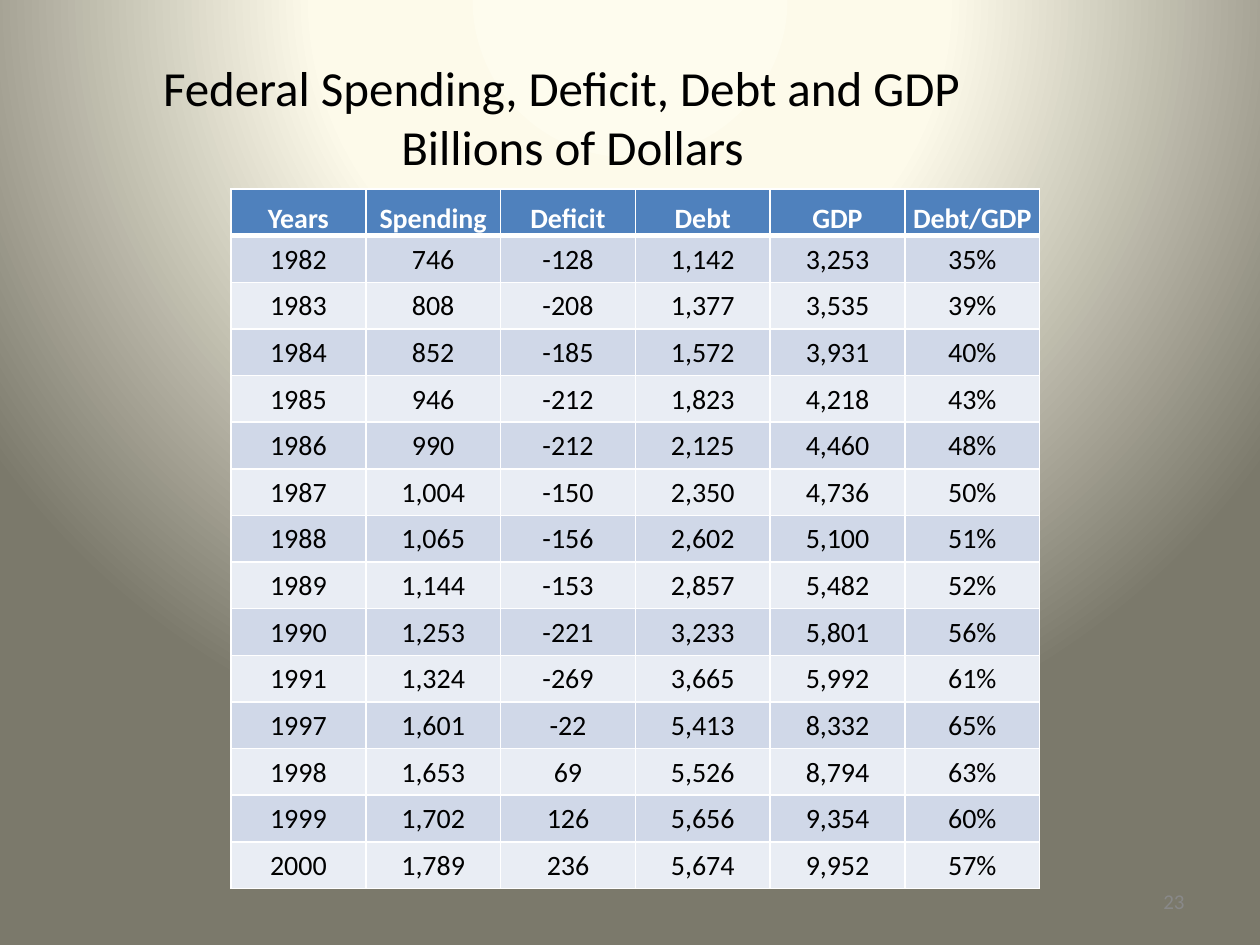
from pptx import Presentation
from pptx.dml.color import RGBColor
from pptx.enum.text import MSO_ANCHOR, PP_ALIGN
from pptx.oxml import parse_xml
from pptx.oxml.ns import nsdecls, qn
from pptx.util import Pt

CENTER, RIGHT = PP_ALIGN.CENTER, PP_ALIGN.RIGHT
MIDDLE, BOTTOM = MSO_ANCHOR.MIDDLE, MSO_ANCHOR.BOTTOM

HEADINGS = ["Years", "Spending", "Deficit", "Debt", "GDP", "Debt/GDP"]
BUDGET = """
1982 746 -128 1,142 3,253 35%
1983 808 -208 1,377 3,535 39%
1984 852 -185 1,572 3,931 40%
1985 946 -212 1,823 4,218 43%
1986 990 -212 2,125 4,460 48%
1987 1,004 -150 2,350 4,736 50%
1988 1,065 -156 2,602 5,100 51%
1989 1,144 -153 2,857 5,482 52%
1990 1,253 -221 3,233 5,801 56%
1991 1,324 -269 3,665 5,992 61%
1997 1,601 -22 5,413 8,332 65%
1998 1,653 69 5,526 8,794 63%
1999 1,702 126 5,656 9,354 60%
2000 1,789 236 5,674 9,952 57%
"""


def color(value):
    return RGBColor.from_string(value)


class Slide:
    font = "Calibri"
    black, white, gray = "000000", "FFFFFF", "898989"
    header, bands = "4F81BD", ("D0D8E8", "E9EDF4")

    def __init__(self, page):
        self.page = page

    def background(self, stops, focus):
        """Circular gradient; stops are (percent, colour) pairs."""
        self.page.background.fill.solid()
        properties = self.page.element.find(".//" + qn("p:bgPr"))
        marks = "".join(
            f'<a:gs pos="{place * 1000}"><a:srgbClr val="{value}"/></a:gs>'
            for place, value in stops)
        left, top, right, bottom = (edge * 1000 for edge in focus)
        properties.replace(properties[0], parse_xml(
            f'<a:gradFill {nsdecls("a")} rotWithShape="1"><a:gsLst>{marks}</a:gsLst>'
            f'<a:path path="circle"><a:fillToRect l="{left}" t="{top}" '
            f'r="{right}" b="{bottom}"/></a:path></a:gradFill>'))

    def add_span(self, para, text, size, ink, align, bold=False):
        para.alignment = align
        span = para.add_run()
        span.text = text
        span.font.name, span.font.size = self.font, Pt(size)
        span.font.bold = bold
        span.font.color.rgb = color(ink)

    def text(self, area, lines, size, ink, align):
        box = self.page.shapes.add_textbox(*map(Pt, area))
        frame = box.text_frame
        frame.word_wrap = True
        frame.vertical_anchor = MIDDLE
        para = frame.paragraphs[0]
        for index, line in enumerate(lines):
            if index:
                para.add_line_break()
            self.add_span(para, line, size, ink, align)

    def border(self, cell, widths):
        """Widths in points for the left, right, top and bottom edges."""
        properties = cell._tc.get_or_add_tcPr()
        for index, (side, width) in enumerate(zip("LRTB", widths)):
            properties.insert(index, parse_xml(
                f'<a:ln{side} {nsdecls("a")} w="{Pt(width)}"><a:solidFill>'
                f'<a:srgbClr val="{self.white}"/></a:solidFill></a:ln{side}>'))

    def table(self, area, rows, size):
        left, top, width, height = area
        table = self.page.shapes.add_table(
            len(rows), len(rows[0]), *map(Pt, area)).table
        table.horz_banding = False
        for column in table.columns:
            column.width = Pt(width / len(rows[0]))
        for number, values in enumerate(rows):
            table.rows[number].height = Pt(height / len(rows))
            is_header = number == 0
            fill = self.header if is_header else self.bands[(number - 1) % 2]
            edges = (1, 1, 3 if number == 1 else 1, 3 if is_header else 1)
            for cell, value in zip(table.rows[number].cells, values):
                cell.margin_left = cell.margin_right = cell.margin_top = Pt(0.72)
                cell.margin_bottom = Pt(0)
                cell.vertical_anchor = BOTTOM if is_header else MIDDLE
                cell.fill.solid()
                cell.fill.fore_color.rgb = color(fill)
                self.border(cell, edges)
                self.add_span(cell.text_frame.paragraphs[0], value, size,
                              self.white if is_header else self.black,
                              CENTER, is_header)


def main():
    deck = Presentation()
    deck.slide_width, deck.slide_height = Pt(720), Pt(540)
    slide = Slide(deck.slides.add_slide(deck.slide_layouts[6]))

    # Background
    slide.background([(0, "FEFCEE"), (40, "FDFAEA"), (100, "7B796B")],
                     (50, -80, 50, 180))

    # Title
    slide.text((0, 21.6, 648, 90),
               ["Federal Spending, Deficit, Debt and GDP ", " Billions of Dollars"],
               28, slide.black, CENTER)

    # Budget table
    rows = [HEADINGS] + [line.split() for line in BUDGET.strip().splitlines()]
    slide.table((132, 108, 462.24, 400), rows, 16)

    # Page number
    slide.text((516, 500.5, 168, 28.75), ["23"], 12, slide.gray, RIGHT)

    deck.save("out.pptx")


if __name__ == "__main__":
    main()
